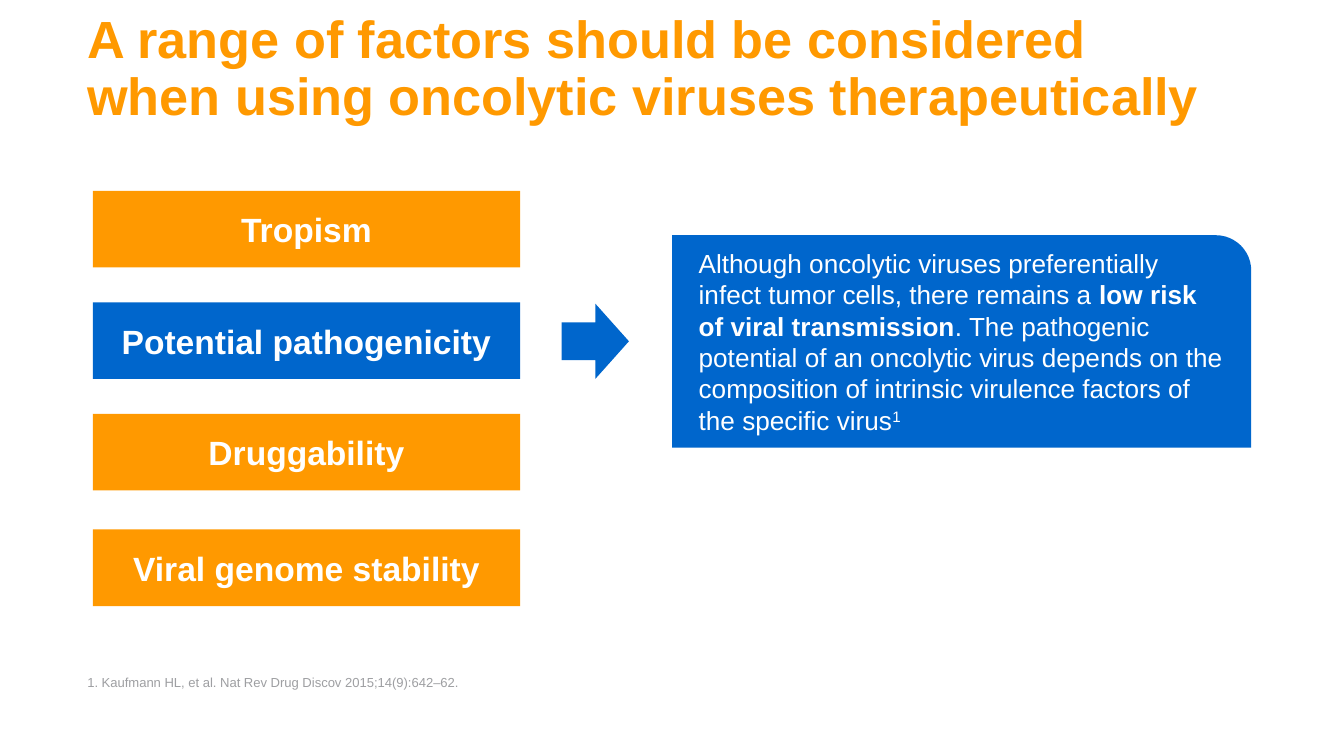
from pptx import Presentation
from pptx import util as u
from pptx.dml.color import RGBColor
from pptx.enum import shapes, text

WIDTH = 10
HEIGHT = WIDTH * 9 / 16
FONT = "Arial"
COLORS = {"orange": "FF9900", "blue": "0066CC", "white": "FFFFFF", "grey": "9E9FA2"}

# Grid: one column each for text, factors, arrow and detail: (left, width)
TEXT_COLUMN = (0.65, 8.47)
FACTOR_COLUMN = (0.69, 3.18)
ARROW_COLUMN = (4.18, 0.5)
DETAIL_COLUMN = (5, 4.31)
FACTOR_HEIGHT = 0.57

# Factor, top of its row, fill
FACTORS = [
    ("Tropism", 1.42, "orange"),
    ("Potential pathogenicity", 2.25, "blue"),
    ("Druggability", 3.08, "orange"),
    ("Viral genome stability", 3.94, "orange"),
]

# Text, bold, superscript
DETAIL = [
    ("Although oncolytic viruses preferentially infect tumor cells, "
     "there remains a ", False, False),
    ("low risk of viral transmission", True, False),
    (". The pathogenic potential of an oncolytic virus depends on the "
     "composition of intrinsic virulence factors of the specific virus", False, False),
    ("1", False, True),
]


def cell(column, top, height):
    left, width = column
    return [u.Inches(value) for value in (left, top, width, height)]


def set_frame(frame, anchor, side=0, end=0):
    frame.word_wrap = True
    frame.auto_size = text.MSO_AUTO_SIZE.NONE
    frame.vertical_anchor = anchor
    frame.margin_left = frame.margin_right = u.Inches(side)
    frame.margin_top = frame.margin_bottom = u.Inches(end)


def set_para(para, size, color, bold=None, align=text.PP_ALIGN.LEFT):
    para.alignment = align
    para.font.name = FONT
    para.font.size = u.Pt(size)
    para.font.bold = bold
    para.font.color.rgb = RGBColor.from_string(COLORS[color])


def add_block(page, kind, place, color):
    box = page.shapes.add_shape(kind, *place)
    box.shadow.inherit = False
    box.fill.solid()
    box.fill.fore_color.rgb = RGBColor.from_string(COLORS[color])
    box.line.fill.background()
    return box


def fill_text(box, words, size, color, bold=None):
    """Bottom-anchored text without margins, for the title and the reference."""
    set_frame(box.text_frame, text.MSO_ANCHOR.BOTTOM)
    para = box.text_frame.paragraphs[0]
    para.text = words
    para.line_spacing = 0.9
    set_para(para, size, color, bold)
    return para


def add_title(page):
    box = page.shapes.title
    box.left, box.top, box.width, box.height = cell(TEXT_COLUMN, 0.3, 0.64)
    fill_text(box, "A range of factors should be considered when using "
                   "oncolytic viruses therapeutically", 28, "orange", True)


def add_factor(page, name, top, color):
    box = add_block(page, shapes.MSO_SHAPE.RECTANGLE,
                    cell(FACTOR_COLUMN, top, FACTOR_HEIGHT), color)
    set_frame(box.text_frame, text.MSO_ANCHOR.MIDDLE, 0.05, 0.13)
    para = box.text_frame.paragraphs[0]
    para.text = name
    set_para(para, 18, "white", True, text.PP_ALIGN.CENTER)


def add_detail(page):
    box = add_block(page, shapes.MSO_SHAPE.ROUND_1_RECTANGLE,
                    cell(DETAIL_COLUMN, 1.75, 1.58), "blue")
    set_frame(box.text_frame, text.MSO_ANCHOR.MIDDLE, 0.1, 0.05)
    para = box.text_frame.paragraphs[0]
    set_para(para, 14, "white")
    properties = para._p.get_or_add_pPr()
    properties.set("marL", str(u.Inches(0.1)))
    properties.set("indent", "0")
    for words, bold, raised in DETAIL:
        span = para.add_run()
        span.text = words
        span.font.bold = bold
        if raised:
            span.font._element.set("baseline", "30000")


def add_reference(page):
    box = page.shapes.add_textbox(*cell(TEXT_COLUMN, 4.81, 0.33))
    para = fill_text(box, "1. Kaufmann HL, et al. Nat Rev Drug Discov "
                          "2015;14(9):642–62.", 7, "grey")
    para.space_after = u.Pt(2)


def main():
    deck = Presentation()
    deck.slide_width, deck.slide_height = u.Inches(WIDTH), u.Inches(HEIGHT)
    page = deck.slides.add_slide(deck.slide_layouts[5])

    # Title and reference
    add_title(page)
    add_reference(page)

    # Arrow from the highlighted factor to its detail
    add_block(page, shapes.MSO_SHAPE.RIGHT_ARROW, cell(ARROW_COLUMN, 2.26, 0.56), "blue")
    add_detail(page)

    # Factors
    for name, top, color in FACTORS:
        add_factor(page, name, top, color)

    deck.save("out.pptx")


if __name__ == "__main__":
    main()
